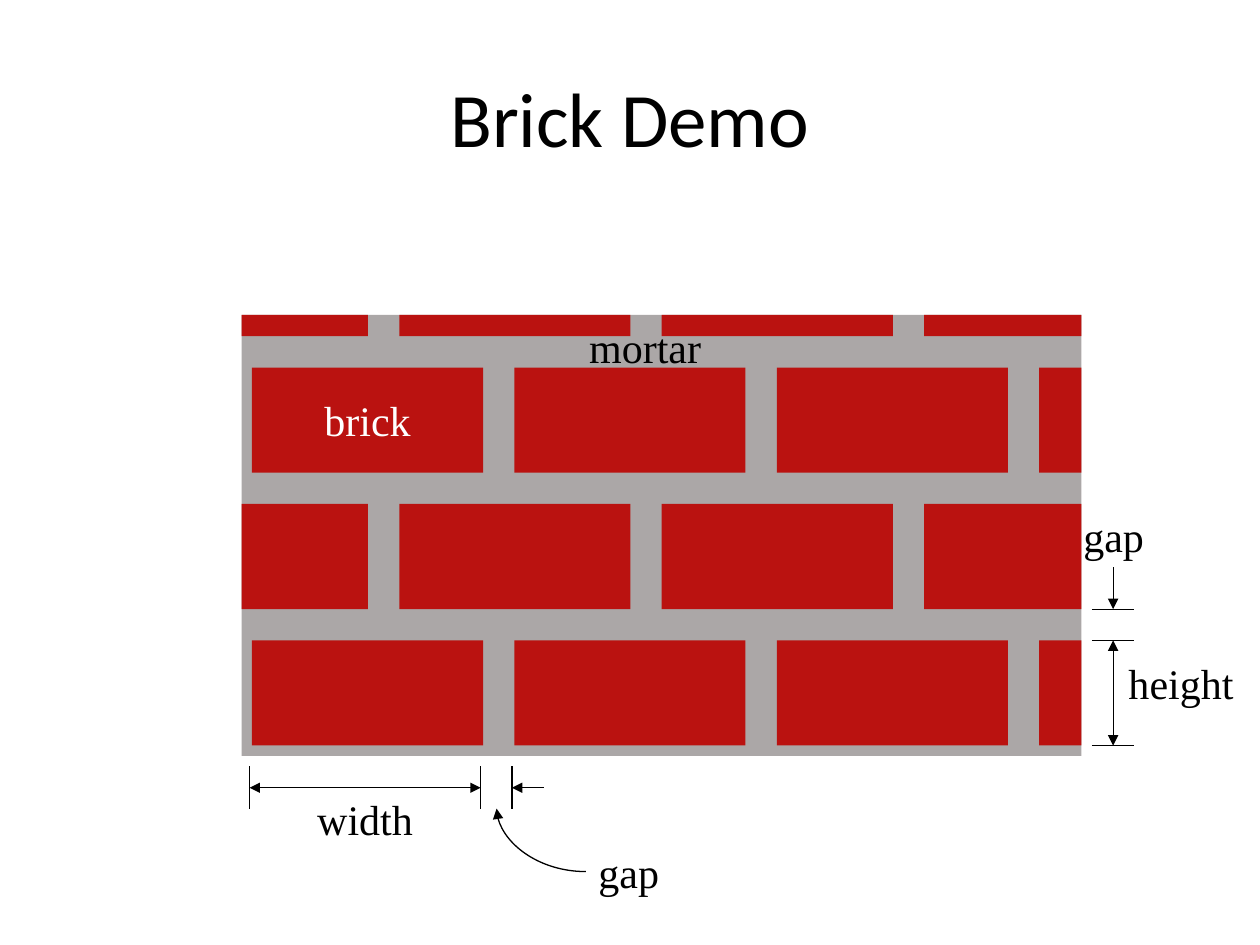
from pptx import Presentation
from pptx.dml.color import RGBColor as RGB
from pptx.enum.shapes import MSO_CONNECTOR as Conn, MSO_SHAPE as Shape
from pptx.enum.text import MSO_ANCHOR as Anchor, MSO_AUTO_SIZE as Fit, PP_ALIGN as Align
from pptx.oxml.ns import qn
from pptx.util import Cm, Pt
from lxml import etree

COLORS = {"mortar": "ABA7A7", "brick": "BA1210", "ink": "000000", "white": "FFFFFF"}

# Wall edges and brick grid, in cm
LEFT, TOP, RIGHT, BOTTOM = 4.87, 6.35, 21.8, 15.24
WIDE, HIGH, GAP = 4.66, 2.12, 0.63
STEP, RISE = WIDE + GAP, HIGH + GAP
BASE = 12.91  # top of the lowest row
STARTS = (5.08, 2.76)  # first brick of even and odd rows


def write(frame, text, size=24, font="Times New Roman", color="ink", align=Align.CENTER):
    par = frame.paragraphs[0]
    par.alignment = align
    run = par.add_run()
    run.text = text
    run.font.size, run.font.name = Pt(size), font
    run.font.color.rgb = RGB.from_string(COLORS[color])


class Sketch:
    def __init__(self, slide):
        self.slide = slide
        self.shapes = slide.shapes

    def title(self, text, x, y, w, h):
        box = self.shapes.title
        box.left, box.top, box.width, box.height = Cm(x), Cm(y), Cm(w), Cm(h)
        box.text_frame.vertical_anchor = Anchor.MIDDLE
        write(box.text_frame, text, size=44, font="Calibri")

    def block(self, x, y, right, low, color):
        """Rectangle between two corners, cut off at the wall's edges."""
        x, y = max(x, LEFT), max(y, TOP)
        right, low = min(right, RIGHT), min(low, BOTTOM)
        rect = self.shapes.add_shape(Shape.RECTANGLE, Cm(x), Cm(y), Cm(right - x), Cm(low - y))
        rect.shadow.inherit = False
        rect.fill.solid()
        rect.fill.fore_color.rgb = RGB.from_string(COLORS[color])
        rect.line.fill.background()

    def line(self, x1, y1, x2, y2, ends=(), kind=Conn.STRAIGHT):
        link = self.shapes.add_connector(kind, Cm(x1), Cm(y1), Cm(x2), Cm(y2))
        link.line.width = Pt(0.75)
        link.line.color.rgb = RGB.from_string(COLORS["ink"])
        for end in ends:
            etree.SubElement(link.line._get_or_add_ln(), qn(f"a:{end}"), type="triangle")
        etree.SubElement(link._element.spPr, qn("a:effectLst"))
        return link

    def curve(self, x1, y1, x2, y2):
        """Quarter bend that starts level at the lower right and ends upright."""
        link = self.line(x2, y2, x1, y1, ("tailEnd",), Conn.CURVE)
        props = link._element.spPr
        props.find(qn("a:prstGeom")).set("prst", "curvedConnector2")
        props.find(qn("a:xfrm")).set("rot", "10800000")

    def label(self, text, x, y, w, wrap=True, **style):
        box = self.shapes.add_textbox(Cm(x), Cm(y), Cm(w), Cm(1.27))
        box.text_frame.word_wrap = wrap
        box.text_frame.auto_size = Fit.SHAPE_TO_FIT_TEXT
        write(box.text_frame, text, **style)


def main():
    deck = Presentation()
    deck.slide_width, deck.slide_height = Cm(25.4), Cm(19.05)
    art = Sketch(deck.slides.add_slide(deck.slide_layouts[5]))
    art.title("Brick Demo", 1.27, 0.76, 22.86, 3.18)

    # Wall: mortar behind, bricks row by row from the bottom
    art.block(LEFT, TOP, RIGHT, BOTTOM, "mortar")
    for row in range(4):
        y = BASE - row * RISE
        for col in range(4):
            x = STARTS[row % 2] + col * STEP
            art.block(x, y, x + WIDE, y + HIGH, "brick")

    # Width and gap below the wall
    start, level = 5.03, 15.88
    end = start + WIDE
    both = ("headEnd", "tailEnd")
    art.line(start, level, end, level, both)
    art.line(end + GAP + 0.64, level, end + GAP, level, ("tailEnd",))
    for x in (start, end, end + GAP):
        art.line(x, 15.45, x, 16.3)
    art.curve(11.81, 17.57, 10.01, 16.3)

    # Height and gap beside the wall
    side = 22.44
    for y in (BASE - GAP, BASE, BASE + HIGH):
        art.line(22.01, y, 22.86, y)
    art.line(side, BASE, side, BASE + HIGH, both)
    art.line(side, 11.43, side, BASE - GAP, ("tailEnd",))

    # Labels
    art.label("width", start, level, WIDE)
    art.label("gap", 11.81, 16.94, 1.73, wrap=False)
    art.label("height", 22.5, 13.13, 2.9, align=Align.LEFT)
    art.label("gap", 21.59, 10.16, 3.18, align=Align.LEFT)
    art.label("brick", 5.08, 7.82, WIDE, color="white")
    art.label("mortar", 11, 6.35, 4.01)

    deck.save("out.pptx")


if __name__ == "__main__":
    main()
